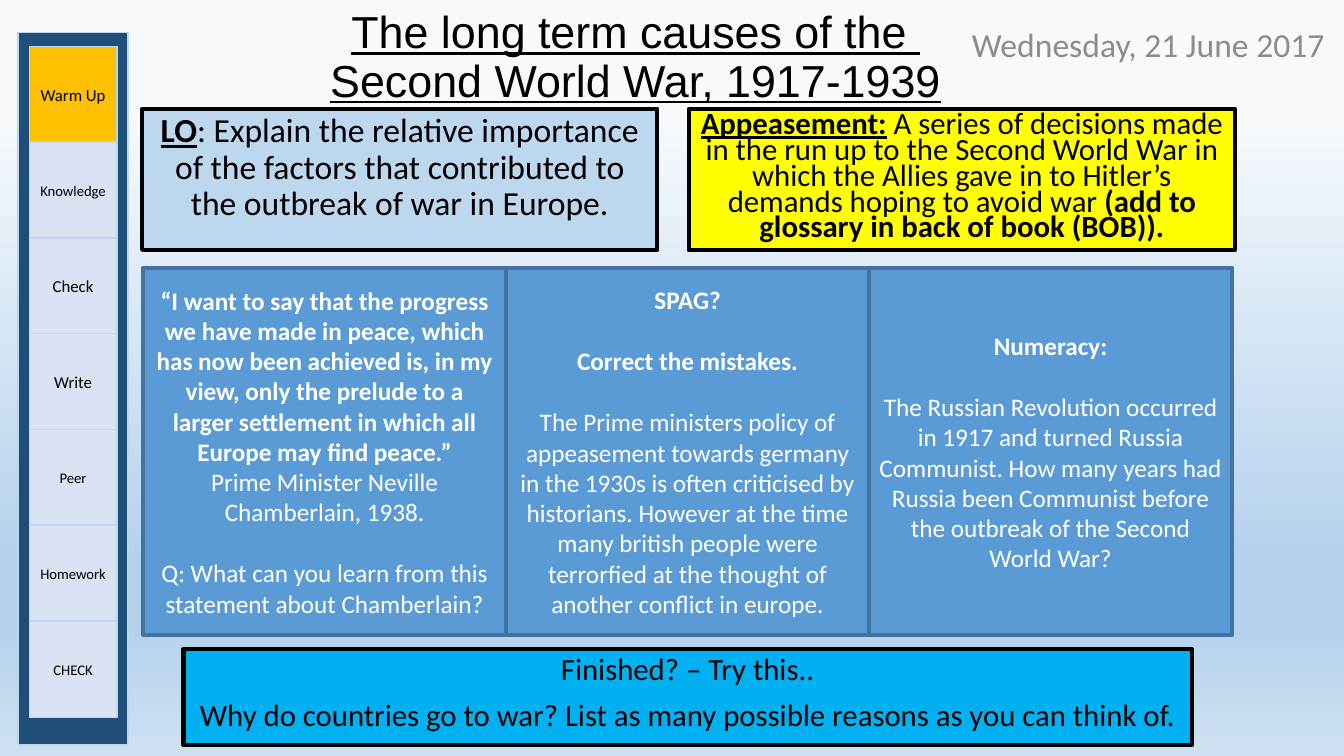
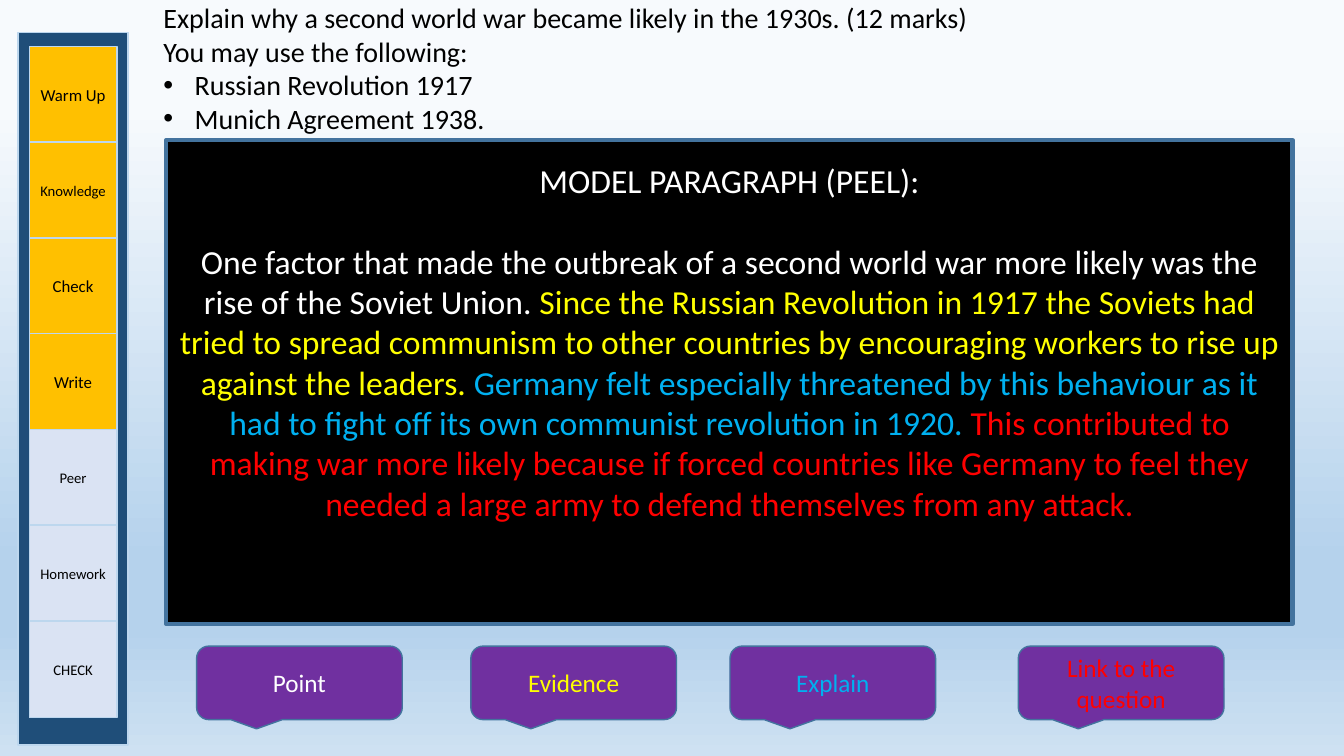
from dataclasses import dataclass, field

from lxml import etree
from pptx import Presentation
from pptx.dml.color import RGBColor
from pptx.enum.shapes import MSO_SHAPE
from pptx.enum.text import MSO_ANCHOR, MSO_AUTO_SIZE, PP_ALIGN
from pptx.oxml.ns import qn
from pptx.util import Inches, Pt

RECT = MSO_SHAPE.RECTANGLE
CALLOUT = MSO_SHAPE.ROUNDED_RECTANGULAR_CALLOUT
TOP, MIDDLE, BOTTOM = MSO_ANCHOR.TOP, MSO_ANCHOR.MIDDLE, MSO_ANCHOR.BOTTOM
LEFT, CENTER = PP_ALIGN.LEFT, PP_ALIGN.CENTER
FIXED_SIZE = MSO_AUTO_SIZE.NONE

BLACK = RGBColor(0x00, 0x00, 0x00)
WHITE = RGBColor(0xFF, 0xFF, 0xFF)
GREY = RGBColor(0x8C, 0x8C, 0x8C)
NAVY = RGBColor(0x1F, 0x4E, 0x79)
BLUE = RGBColor(0x5B, 0x9B, 0xD5)
EDGE_BLUE = RGBColor(0x43, 0x73, 0x9E)
PALE_BLUE = RGBColor(0xBD, 0xD7, 0xEE)
LAVENDER = RGBColor(0xDA, 0xE3, 0xF3)
SKY = RGBColor(0x00, 0xB0, 0xF0)
GOLD = RGBColor(0xFF, 0xC0, 0x00)
YELLOW = RGBColor(0xFF, 0xFF, 0x00)
RED = RGBColor(0xFF, 0x00, 0x00)
PURPLE = RGBColor(0x70, 0x30, 0xA0)

BACKDROP = [(14, "F7FAFD"), (74, "B5D2EC"), (83, "B5D2EC"), (100, "CEE1F2")]
BOLD = {"bold": True}
KEY_TERM = {"bold": True, "underline": True}

# Lesson stages in the side rail, with their text sizes
STAGES = [("Warm Up", 12), ("Knowledge", 10.5), ("Check", 12), ("Write", 12),
          ("Peer", 10.5), ("Homework", 10.5), ("CHECK", 10.5)]


@dataclass
class Para:
    """Runs of (text, font values), with paragraph values and a bullet."""
    runs: list
    layout: dict = field(default_factory=dict)
    bullet: str = ""


def plain(text, font=None, before=0):
    return Para([(text, font or {})], {"space_before": Pt(before)})


def set_values(target, values):
    for name, value in values.items():
        setattr(target, name, value)


class Lesson:
    def __init__(self):
        self.prs = Presentation()
        self.prs.slide_width, self.prs.slide_height = Inches(13.33), Inches(7.5)
        self.slide = None
        self.paint_master()

    def paint_master(self):
        master = self.prs.slide_master
        fill = master.background.fill
        fill.gradient()
        fill.gradient_angle = 270
        stops = next(master.element.iter(qn("a:gsLst")))
        for stop in list(stops):
            stops.remove(stop)
        for percent, colour in BACKDROP:
            stop = etree.SubElement(stops, qn("a:gs"), pos=str(percent * 1000))
            etree.SubElement(stop, qn("a:srgbClr"), val=colour)

    def new_slide(self, layout, done):
        """Add a slide whose rail shows the first `done` stages as reached."""
        self.slide = self.prs.slides.add_slide(self.prs.slide_layouts[layout])
        self.box((0.18, 0.32, 1.09, 7.07), NAVY, PALE_BLUE, 1)
        for i, (stage, size) in enumerate(STAGES):
            self.box((0.29, 0.46 + 0.95 * i, 0.87, 0.96),
                     GOLD if i < done else LAVENDER, PALE_BLUE, 1,
                     [plain(stage)], size)

    def paint(self, shape, fill, edge, weight):
        shape.fill.solid()
        shape.fill.fore_color.rgb = fill
        shape.line.color.rgb = edge
        shape.line.width = Pt(weight)
        shape.shadow.inherit = False

    def box(self, at, fill, edge, weight, paras=(), size=18, colour=BLACK,
            kind=RECT, **values):
        shape = self.slide.shapes.add_shape(kind, *map(Inches, at))
        self.paint(shape, fill, edge, weight)
        self.set_text(shape, paras, size, colour, **values)

    def label(self, at, paras, size, colour, **values):
        shape = self.slide.shapes.add_textbox(*map(Inches, at))
        self.set_text(shape, paras, size, colour, **values)

    def placeholder(self, index, at, paras, size, **values):
        shape = self.slide.placeholders[index]
        shape.left, shape.top, shape.width, shape.height = map(Inches, at)
        self.set_text(shape, paras, size, BLACK, **values)
        return shape

    def set_text(self, shape, paras, size, colour, align=CENTER, anchor=MIDDLE,
                 spacing=1.0, face="Calibri", frame=None):
        text = shape.text_frame
        set_values(text, {"word_wrap": True, "auto_size": FIXED_SIZE,
                          "vertical_anchor": anchor, **(frame or {})})
        for i, para in enumerate(paras):
            line = text.paragraphs[0] if i == 0 else text.add_paragraph()
            set_values(line, {"alignment": align, "line_spacing": spacing,
                              "space_before": Pt(0), **para.layout})
            self.set_bullet(line, para.bullet)
            for words, changes in para.runs:
                values = {"size": Pt(size), "name": face, "bold": False, **changes}
                tint = values.pop("colour", colour)
                for j, part in enumerate(words.split("\n")):
                    if j:
                        line.add_line_break()
                    run = line.add_run()
                    run.text = part
                    set_values(run.font, values)
                    run.font.color.rgb = tint

    def set_bullet(self, line, bullet):
        props = line._p.get_or_add_pPr()
        indent = Inches(0.31) if bullet else 0
        props.set("marL", str(indent))
        props.set("indent", str(-indent))
        if bullet:
            etree.SubElement(props, qn("a:buFont"), typeface="Arial")
            etree.SubElement(props, qn("a:buChar"), char=bullet)
        else:
            etree.SubElement(props, qn("a:buNone"))


def warm_up(lesson):
    lesson.new_slide(0, done=1)
    lesson.placeholder(
        0, (1.12, 0.1, 10.37, 1.01),
        [plain("The long term causes of the \nSecond World War, 1917-1939",
               {"underline": True})],
        32, anchor=BOTTOM, spacing=0.9, face="Arial")
    lesson.label((9.54, 0.14, 3.79, 0.6), [plain("Wednesday, 21 June 2017")],
                 24, GREY, align=LEFT)

    # Objective and key term
    lesson.box((1.41, 1.08, 5.11, 1.4), PALE_BLUE, BLACK, 3, [Para([
        ("LO", KEY_TERM),
        (": Explain the relative importance of the factors that contributed to "
         "the outbreak of war in Europe.", {})])],
        24, anchor=TOP, spacing=0.9)
    lesson.box((6.83, 1.08, 5.42, 1.4), YELLOW, BLACK, 3, [Para([
        ("Appeasement:", KEY_TERM),
        (" A series of decisions made in the run up to the Second World War in "
         "which the Allies gave in to Hitler’s demands hoping to avoid war ", {}),
        ("(add to glossary in back of book (BOB)).", BOLD)])],
        22, anchor=TOP, spacing=0.7)

    # Three starter tasks; a gap is one line of text
    gap = 22
    tasks = [
        [plain("“I want to say that the progress we have made in peace, which has "
               "now been achieved is, in my view, only the prelude to a larger "
               "settlement in which all Europe may find peace.”", BOLD),
         plain("Prime Minister Neville Chamberlain, 1938."),
         plain("Q: What can you learn from this statement about Chamberlain?",
               before=gap)],
        [plain("SPAG?", BOLD),
         plain("Correct the mistakes.", BOLD, gap),
         plain("The Prime ministers policy of appeasement towards germany in the "
               "1930s is often criticised by historians. However at the time many "
               "british people were terrorfied at the thought of another conflict "
               "in europe.", before=gap)],
        [plain("Numeracy:", BOLD),
         plain("The Russian Revolution occurred in 1917 and turned Russia "
               "Communist. How many years had Russia been Communist before the "
               "outbreak of the Second World War?", before=gap)],
    ]
    for i, task in enumerate(tasks):
        lesson.box((1.42 + 3.6 * i, 2.66, 3.6, 3.64), BLUE, EDGE_BLUE, 3,
                   task, 18, WHITE)

    # Extension task
    extension = lesson.placeholder(
        1, (1.82, 6.44, 10, 0.95),
        [plain("Finished? – Try this.."),
         plain("Why do countries go to war? List as many possible reasons as you "
               "can think of.", before=9)],
        22, anchor=TOP, spacing=0.9)
    lesson.paint(extension, SKY, BLACK, 3)


def model_answer(lesson):
    lesson.new_slide(1, done=4)

    # Exam question
    flush = {"margin_top": 0, "margin_bottom": 0}
    lesson.placeholder(
        0, (1.52, 0, 11.44, 0.34),
        [plain("Explain why a second world war became likely in the 1930s. "
               "(12 marks)")],
        20, align=LEFT, anchor=TOP, frame=flush)
    lesson.placeholder(
        1, (1.52, 0.34, 11.44, 1.05),
        [plain("You may use the following:"),
         Para([("Russian Revolution 1917", {})], bullet="•"),
         Para([("Munich Agreement 1938.", {})], bullet="•")],
        20, align=LEFT, anchor=TOP, frame=flush)

    # Each PEEL step: label, callout left, colour, its part of the paragraph
    steps = [
        ("Point", 1.95, WHITE,
         "One factor that made the outbreak of a second world war more likely was "
         "the rise of the Soviet Union. "),
        ("Evidence", 4.67, YELLOW,
         "Since the Russian Revolution in 1917 the Soviets had tried to spread "
         "communism to other countries by encouraging workers to rise up against "
         "the leaders. "),
        ("Explain", 7.24, SKY,
         "Germany felt especially threatened by this behaviour as it had to fight "
         "off its own communist revolution in 1920. "),
        ("Link to the question", 10.1, RED,
         "This contributed to making war more likely because if forced countries "
         "like Germany to feel they needed a large army to defend themselves from "
         "any attack."),
    ]
    paragraph = Para([(words, {"colour": tint}) for _, _, tint, words in steps],
                     {"space_before": Pt(29)})
    lesson.box((1.65, 1.39, 11.17, 4.8), BLACK, EDGE_BLUE, 3,
               [plain("MODEL PARAGRAPH (PEEL):"), paragraph], 24, WHITE,
               frame={"margin_bottom": Inches(0.86)})
    for step, left, tint, _ in steps:
        lesson.box((left, 6.41, 2.04, 0.73), PURPLE, EDGE_BLUE, 1,
                   [plain(step)], 18, tint, kind=CALLOUT)


def main():
    lesson = Lesson()
    warm_up(lesson)
    model_answer(lesson)
    lesson.prs.save("out.pptx")


if __name__ == "__main__":
    main()
